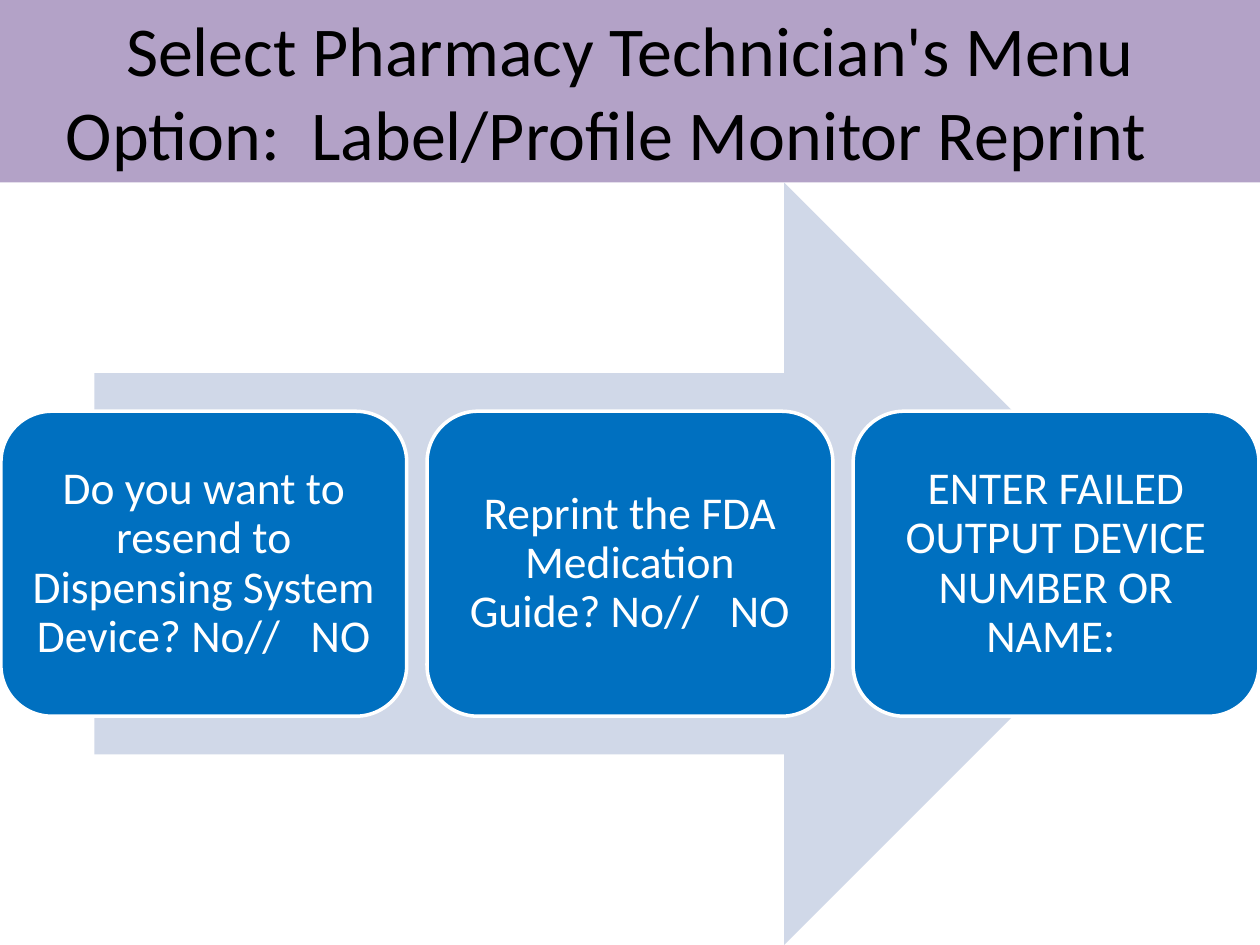
from dataclasses import dataclass

from pptx import Presentation
from pptx.dml.color import RGBColor
from pptx.enum.shapes import MSO_SHAPE as Preset
from pptx.enum.text import MSO_ANCHOR as Anchor, PP_ALIGN as Align
from pptx.util import Cm, Pt


@dataclass(frozen=True)
class Theme:
    """Colours, font and type sizes of the slide."""
    banner: str = "B3A2C7"
    arrow: str = "D0D8E8"
    step: str = "0070C0"
    light: str = "FFFFFF"
    dark: str = "000000"
    font: str = "Calibri"
    title_size: int = 40
    step_size: int = 26


@dataclass(frozen=True)
class Box:
    """A rectangle in centimetres."""
    left: float
    top: float
    width: float
    height: float


THEME = Theme()
SLIDE = Box(0, 0, 25.4, 19.05)
BANNER_HEIGHT = 3.68
TITLE = "Select Pharmacy Technician's Menu Option:  Label/Profile Monitor Reprint   "
STEPS = [
    "Do you want to resend to Dispensing System Device? No//   NO",
    "Reprint the FDA Medication Guide? No//   NO",
    "ENTER FAILED OUTPUT DEVICE NUMBER OR NAME: ",
]


def add_panel(slide, preset, box, fill, outline=None):
    """Add a filled preset shape, outlined only when a colour is given."""
    panel = slide.shapes.add_shape(
        preset, Cm(box.left), Cm(box.top), Cm(box.width), Cm(box.height))
    panel.shadow.inherit = False
    panel.fill.solid()
    panel.fill.fore_color.rgb = RGBColor.from_string(fill)
    if outline:
        panel.line.color.rgb = RGBColor.from_string(outline)
        panel.line.width = Pt(2)
    else:
        panel.line.fill.background()
    return panel


def write_text(panel, words, *, size, color, anchor=Anchor.MIDDLE,
               inset=(0.25, 0.13), line_spacing=1.0):
    """Write one centred paragraph into a panel."""
    frame = panel.text_frame
    frame.word_wrap = True
    frame.vertical_anchor = anchor
    frame.margin_left = frame.margin_right = Cm(inset[0])
    frame.margin_top = frame.margin_bottom = Cm(inset[1])
    paragraph = frame.paragraphs[0]
    paragraph.alignment = Align.CENTER
    paragraph.line_spacing = line_spacing
    run = paragraph.add_run()
    run.text = words
    run.font.name = THEME.font
    run.font.size = Pt(size)
    run.font.color.rgb = RGBColor.from_string(color)


def add_banner(slide, box, title):
    """Place the title on its coloured band."""
    banner = add_panel(slide, Preset.RECTANGLE, box, THEME.banner)
    write_text(banner, title, size=THEME.title_size, color=THEME.dark,
               anchor=Anchor.TOP)


def add_process(slide, box, steps):
    """Place a broad arrow with a centred row of equal steps over it."""
    arrow_width = box.width * 0.85
    arrow_left = box.left + (box.width - arrow_width) / 2
    add_panel(slide, Preset.RIGHT_ARROW,
              Box(arrow_left, box.top, arrow_width, box.height), THEME.arrow)

    gap, margin = 0.41, 0.02
    height = box.height * 0.4
    width = (box.width - 2 * margin - gap * (len(steps) - 1)) / len(steps)
    top = box.top + (box.height - height) / 2
    for index, words in enumerate(steps):
        left = box.left + margin + index * (width + gap)
        step = add_panel(slide, Preset.ROUNDED_RECTANGLE,
                         Box(left, top, width, height), THEME.step, THEME.light)
        write_text(step, words, size=THEME.step_size, color=THEME.light,
                   inset=(0.28, 0.28), line_spacing=0.9)


def main():
    """Build and save the slide."""
    deck = Presentation()
    deck.slide_width, deck.slide_height = Cm(SLIDE.width), Cm(SLIDE.height)
    slide = deck.slides.add_slide(deck.slide_layouts[6])
    add_banner(slide, Box(0, 0, SLIDE.width, BANNER_HEIGHT), TITLE)
    add_process(slide, Box(0, BANNER_HEIGHT, SLIDE.width,
                           SLIDE.height - BANNER_HEIGHT), STEPS)
    deck.save("out.pptx")


if __name__ == "__main__":
    main()
